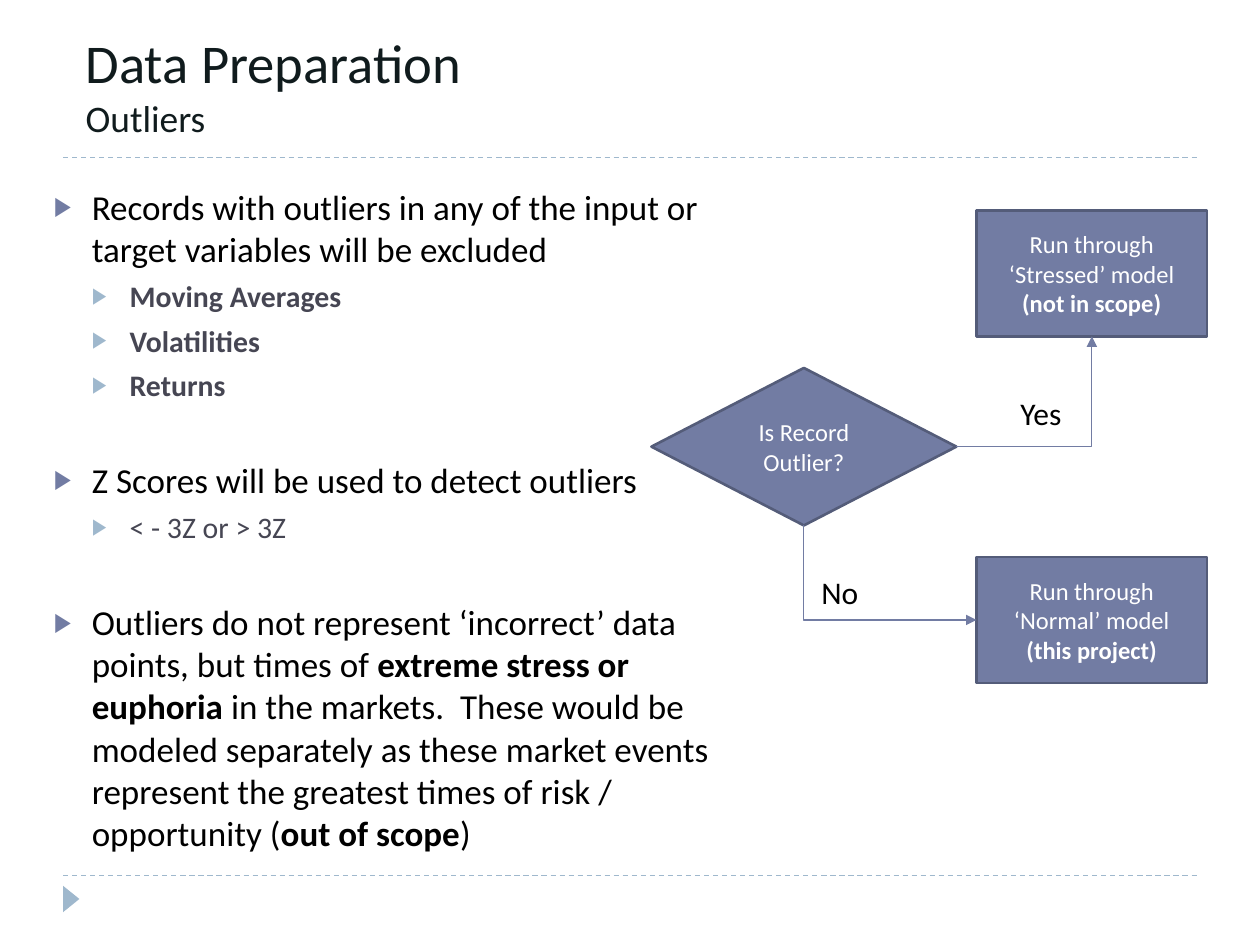
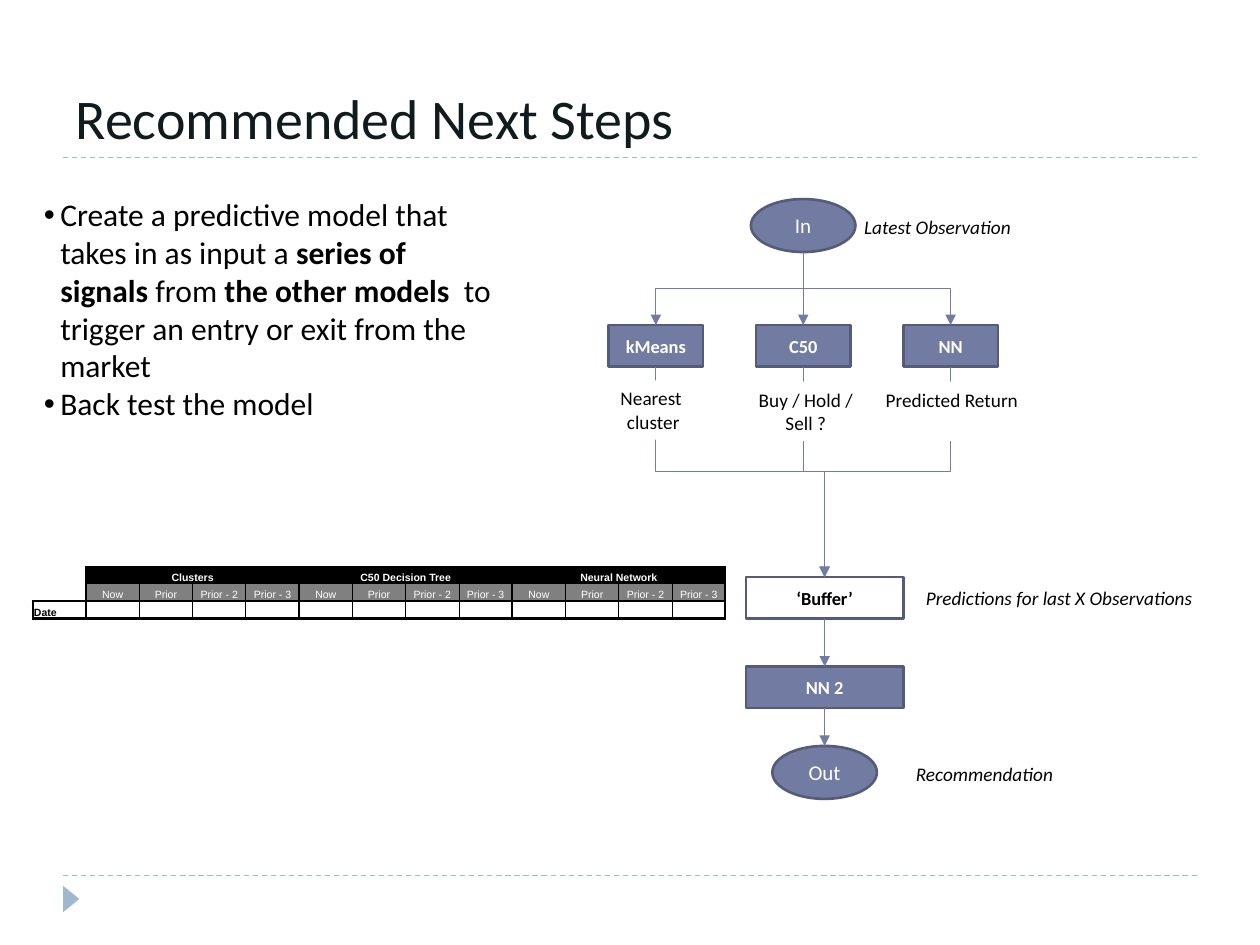
import pptx
import pptx.util
import pptx.dml.color
import pptx.enum.dml
import pptx.enum.shapes
import pptx.enum.text
import pptx.oxml.ns
from lxml import etree

Inches, Pt = pptx.util.Inches, pptx.util.Pt
SHAPE = pptx.enum.shapes.MSO_SHAPE
CONNECTOR = pptx.enum.shapes.MSO_CONNECTOR
ANCHOR = pptx.enum.text.MSO_ANCHOR
ALIGN = pptx.enum.text.PP_ALIGN
AUTO = pptx.enum.text.MSO_AUTO_SIZE
qn = pptx.oxml.ns.qn

# Shared look
FONT = "Calibri"
INK, TITLE, GREY = "000000", "101B1D", "464653"
WHITE, ACCENT, EDGE, PALE = "FFFFFF", "727CA3", "545C79", "9FB8CD"

# Content: a run is (text, style), where style holds "b" and/or "i"
OUTLIERS_TITLE = [("Data Preparation", 31.2), ("Outliers", 21.4)]
OUTLIERS_BODY = [  # level, space before, runs
    (0, 6, [("Records with outliers in any of the input or target variables will be excluded", "")]),
    (1, 5, [("Moving Averages", "b")]),
    (1, 5, [("Volatilities", "b")]),
    (1, 5, [("Returns", "b")]),
    (0, 32, [("Z Scores will be used to detect outliers", "")]),
    (1, 5, [("< - 3Z or > 3Z", "")]),
    (0, 32, [("Outliers do not represent ‘incorrect’ data points, but times of ", ""),
             ("extreme stress or euphoria ", "b"),
             ("in the markets.  These would be modeled separately as these market events "
              "represent the greatest times of risk / opportunity (", ""),
             ("out of scope", "b"), (")", "")]),
]
LEVELS = [(20, INK, ACCENT), (17, GREY, PALE)]  # size, text colour, bullet colour
OUTLIER_NODES = {  # shape, place, runs
    "normal": (SHAPE.RECTANGLE, (7.75, 4.42, 1.83, 1),
               [("Run through ‘Normal’ model ", ""), ("(this project)", "b")]),
    "stressed": (SHAPE.RECTANGLE, (7.75, 1.67, 1.83, 1),
                 [("Run through ‘Stressed’ model ", ""), ("(not in scope)", "b")]),
    "question": (SHAPE.DIAMOND, (5.17, 2.92, 2.42, 1.25), [("Is Record Outlier?", "")]),
}
ANSWERS = [("Yes", (8, 3.08, 0.61, 0.4)), ("No", (6.42, 4.5, 0.52, 0.4))]

STEPS_TITLE = [("Recommended Next Steps", 32)]
STEPS_BODY = [
    [("Create a predictive model that takes in as input a ", ""), ("series of signals ", "b"),
     ("from ", ""), ("the other models  ", "b"),
     ("to trigger an entry or exit from the market", "")],
    [("Back test the model", "")],
]
MODELS = ["kMeans", "C50", "NN"]
STEP_BOXES = {  # place, fill, text colour
    **{m: ((4.83 + 1.17 * i, 2.58, 0.75, 0.33), ACCENT, WHITE) for i, m in enumerate(MODELS)},
    "‘Buffer’": ((5.92, 4.58, 1.25, 0.33), WHITE, INK),
    "NN 2": ((5.92, 5.29, 1.25, 0.33), ACCENT, WHITE),
}
STEP_ENDS = {"In": (5.96, 1.58, 0.83, 0.42), "Out": (6.13, 5.92, 0.83, 0.42)}
MODEL_OUTPUTS = [
    (["Nearest ", "cluster"], (4.52, 3.02, 1.33, 0.47)),
    (["Buy / Hold /", "Sell ?"], (5.77, 3.03, 1.25, 0.47)),
    (["Predicted Return"], (6.93, 3.03, 1.25, 0.47)),
]
STEP_NOTES = [
    ("Latest Observation", (6.76, 1.66, 1.49, 0.29)),
    ("Predictions for last X Observations", (7.25, 4.6, 2.57, 0.29)),
    ("Recommendation", (7.17, 6, 1.41, 0.29)),
]
GROUPS = ["Clusters", "C50 Decision Tree", "Neural Network"]
PERIODS = ["Now", "Prior", "Prior - 2", "Prior - 3"]
ROW_HEIGHTS = [0.13, 0.14, 0.14]
NO_TABLE_STYLE = "{2D5ABB26-0587-4C30-8999-92F81FD0307C}"


def rgb(color):
    return pptx.dml.color.RGBColor.from_string(color)


def box(place):
    return [Inches(v) for v in place]


# Text helpers
def add_runs(p, runs, size, color, font=FONT):
    for text, style in runs:
        r = p.add_run()
        r.text = text
        r.font.name, r.font.size = font, Pt(size)
        r.font.bold, r.font.italic = "b" in style, "i" in style
        r.font.color.rgb = rgb(color)


def paragraphs(tf, count):
    return [tf.paragraphs[0]] + [tf.add_paragraph() for _ in range(count - 1)]


def bullet(p, char, indent, hang, color=None, percent=None):
    pPr = p._p.get_or_add_pPr()
    pPr.set("marL", str(Inches(indent)))
    pPr.set("indent", str(-Inches(hang)))
    if color:
        clr = etree.SubElement(pPr, qn("a:buClr"))
        etree.SubElement(clr, qn("a:srgbClr"), val=color)
    if percent:
        etree.SubElement(pPr, qn("a:buSzPct"), val=str(percent * 1000))
    etree.SubElement(pPr, qn("a:buFont"), typeface="Arial")
    etree.SubElement(pPr, qn("a:buChar"), char=char)


def add_text(s, place, wrap=True):
    tf = s.shapes.add_textbox(*box(place)).text_frame
    tf.word_wrap = wrap
    return tf


def add_label(s, text, place, size, style=""):
    tf = add_text(s, place, wrap=False)
    tf.auto_size = AUTO.SHAPE_TO_FIT_TEXT
    add_runs(tf.paragraphs[0], [(text, style)], size, INK)


# Shape and line helpers
def add_shape(s, kind, place, fill, edge=None):
    sp = s.shapes.add_shape(kind, *box(place))
    sp.shadow.inherit = False
    sp.fill.solid()
    sp.fill.fore_color.rgb = rgb(fill)
    if edge:
        sp.line.color.rgb = rgb(edge)
        sp.line.width = Pt(1.5)
    else:
        sp.line.fill.background()
    return sp


def add_node(s, kind, place, runs, size, fill=ACCENT, color=WHITE):
    sp = add_shape(s, kind, place, fill, EDGE)
    tf = sp.text_frame
    tf.word_wrap, tf.vertical_anchor = True, ANCHOR.MIDDLE
    tf.paragraphs[0].alignment = ALIGN.CENTER
    add_runs(tf.paragraphs[0], runs, size, color)
    return sp


def add_line(s, start, end, color=ACCENT, kind=CONNECTOR.STRAIGHT, arrow=True):
    c = s.shapes.add_connector(kind, *start, *end)
    c.line.color.rgb = rgb(color)
    c.line.width = Pt(0.75)
    if arrow:
        etree.SubElement(c.element.spPr.find(qn("a:ln")), qn("a:tailEnd"), type="triangle")
    etree.SubElement(c.element.spPr, qn("a:effectLst"))
    return c


def one_bend(c):
    c.element.spPr.find(qn("a:prstGeom")).set("prst", "bentConnector2")


def elbow_down(s, start, end):
    """Elbow that leaves downwards: a box lying on its side, turned about its centre."""
    (x1, y1), (x2, y2) = start, end
    w, h = y2 - y1, abs(x2 - x1)
    left, top = (x1 + x2 - w) // 2, (y1 + y2 - h) // 2
    c = add_line(s, (left, top), (left + w, top + h), kind=CONNECTOR.ELBOW)
    xfrm = c.element.spPr.find(qn("a:xfrm"))
    xfrm.set("rot", str((270 if x2 > x1 else 90) * 60000))
    if x2 > x1:
        xfrm.set("flipH", "1")
    return c


def site(sp, fx, fy):
    return sp.left + int(sp.width * fx), sp.top + int(sp.height * fy)


def top(sp):
    return site(sp, 0.5, 0)


def bottom(sp):
    return site(sp, 0.5, 1)


# Frame of every slide: title, two dashed rules, corner triangle
def new_slide(prs, title, place):
    s = prs.slides.add_slide(prs.slide_layouts[5])
    for y in (6.95, 1.25):
        c = add_line(s, box((0.5, y)), box((9.5, y)), PALE, arrow=False)
        c.line.dash_style = pptx.enum.dml.MSO_LINE.DASH
    add_shape(s, SHAPE.ISOSCELES_TRIANGLE, (0.46, 7.07, 0.21, 0.13), PALE).rotation = 90
    sp = s.shapes.title
    sp.left, sp.top, sp.width, sp.height = box(place)
    tf = sp.text_frame
    tf.auto_size, tf.word_wrap, tf.vertical_anchor = AUTO.NONE, True, ANCHOR.BOTTOM
    for p, (text, size) in zip(paragraphs(tf, len(title)), title):
        p.alignment, p.space_before = ALIGN.LEFT, Pt(0)
        add_runs(p, [(text, "")], size, TITLE)
    return s


def outliers_slide(prs):
    s = new_slide(prs, OUTLIERS_TITLE, (0.58, 0.08, 9, 1.08))
    tf = add_text(s, (0.33, 1.42, 5.42, 4.5))
    for p, (level, gap, runs) in zip(paragraphs(tf, len(OUTLIERS_BODY)), OUTLIERS_BODY):
        size, color, mark = LEVELS[level]
        p.level, p.space_before = level, Pt(gap)
        bullet(p, "▶", 0.3 * (level + 1), 0.3, mark, 76)
        add_runs(p, runs, size, color)

    # Decision flow
    nodes = {name: add_node(s, *node, 14) for name, node in OUTLIER_NODES.items()}
    question = nodes["question"]
    one_bend(add_line(s, site(question, 1, 0.5), bottom(nodes["stressed"]),
                      kind=CONNECTOR.ELBOW))
    one_bend(elbow_down(s, bottom(question), site(nodes["normal"], 0, 0.5)))
    for text, place in ANSWERS:
        add_label(s, text, place, 18)


# Table of predictions
def set_borders(cell, widths):
    tcPr = cell._tc.get_or_add_tcPr()
    for side, width in zip("LRTB", widths):
        ln = etree.SubElement(tcPr, qn("a:ln" + side), w=str(Pt(width)))
        if width:
            fill = etree.SubElement(ln, qn("a:solidFill"))
            etree.SubElement(fill, qn("a:srgbClr"), val=INK)
        else:
            etree.SubElement(ln, qn("a:noFill"))


def vertical_edge(row, col, last):
    if col == 0:
        return 1.5 if row == 2 else 0
    if col == last or (col == 1 and row < 2):
        return 1.5
    return 1 if col % len(PERIODS) == 1 else 0.5


def horizontal_edge(row, col):
    if col == 0 and row < 2:
        return 0
    return 0.5 if row == 1 else 1.5


def buffer_table(s):
    n = len(PERIODS)
    cols = 1 + n * len(GROUPS)
    rows = [[""] + [t for g in GROUPS for t in [g] + [""] * (n - 1)],
            [""] + PERIODS * len(GROUPS),
            ["Date"] + [""] * (cols - 1)]
    frame = s.shapes.add_table(len(rows), cols, *box((0.26, 4.5, 5.5, sum(ROW_HEIGHTS))))
    table = frame.table
    frame.element.find(".//" + qn("a:tableStyleId")).text = NO_TABLE_STYLE
    table.first_row = table.horz_banding = False
    for i, texts in enumerate(rows):
        table.rows[i].height = Inches(ROW_HEIGHTS[i])
        for j, text in enumerate(texts):
            cell = table.cell(i, j)
            cell.margin_left = cell.margin_right = cell.margin_top = Inches(0.01)
            cell.margin_bottom = 0
            cell.vertical_anchor = ANCHOR.BOTTOM
            set_borders(cell, (vertical_edge(i, j, cols), vertical_edge(i, j + 1, cols),
                               horizontal_edge(i, j), horizontal_edge(i + 1, j)))
            if j and i < 2:
                cell.fill.solid()
                cell.fill.fore_color.rgb = rgb(("000000", "808080")[i])
            else:
                cell.fill.background()
            p = cell.text_frame.paragraphs[0]
            p.alignment = ALIGN.CENTER if j else ALIGN.LEFT
            if text:
                add_runs(p, [(text, "" if i == 1 else "b")], 6, WHITE if j else INK, "Arial")
            else:
                etree.SubElement(p._p, qn("a:endParaRPr"), sz="600")
    for j in range(1, cols, n):
        table.cell(0, j).merge(table.cell(0, j + n - 1))


def steps_slide(prs):
    s = new_slide(prs, STEPS_TITLE, (0.5, 0.17, 9, 1.08))
    tf = add_text(s, (0.25, 1.5, 3.75, 1.92))
    for p, runs in zip(paragraphs(tf, len(STEPS_BODY)), STEPS_BODY):
        bullet(p, "•", 0.13, 0.13)
        add_runs(p, runs, 18, INK)

    # Flow from the input through three models to the output
    nodes = {name: add_node(s, SHAPE.RECTANGLE, place, [(name, "b")], 10.5, fill, color)
             for name, (place, fill, color) in STEP_BOXES.items()}
    for name, place in STEP_ENDS.items():
        nodes[name] = add_node(s, SHAPE.OVAL, place, [(name, "")], 12)
    for model in MODELS:
        if model != "C50":
            elbow_down(s, bottom(nodes["In"]), top(nodes[model]))
        elbow_down(s, bottom(nodes[model]), top(nodes["‘Buffer’"]))
    for a, b in [("In", "C50"), ("‘Buffer’", "NN 2"), ("NN 2", "Out")]:
        add_line(s, bottom(nodes[a]), top(nodes[b]))

    # Model outputs cover the lines behind them
    for lines, place in MODEL_OUTPUTS:
        tf = add_shape(s, SHAPE.RECTANGLE, place, WHITE).text_frame
        tf.word_wrap, tf.vertical_anchor = True, ANCHOR.TOP
        tf.margin_left = tf.margin_right = Inches(0.05)
        for p, text in zip(paragraphs(tf, len(lines)), lines):
            p.alignment = ALIGN.CENTER
            add_runs(p, [(text, "")], 11, INK)
    for text, place in STEP_NOTES:
        add_label(s, text, place, 11, "i")
    buffer_table(s)


def main():
    prs = pptx.Presentation()
    prs.slide_width, prs.slide_height = Inches(10), Inches(7.5)
    outliers_slide(prs)
    steps_slide(prs)
    prs.save("out.pptx")


if __name__ == "__main__":
    main()
